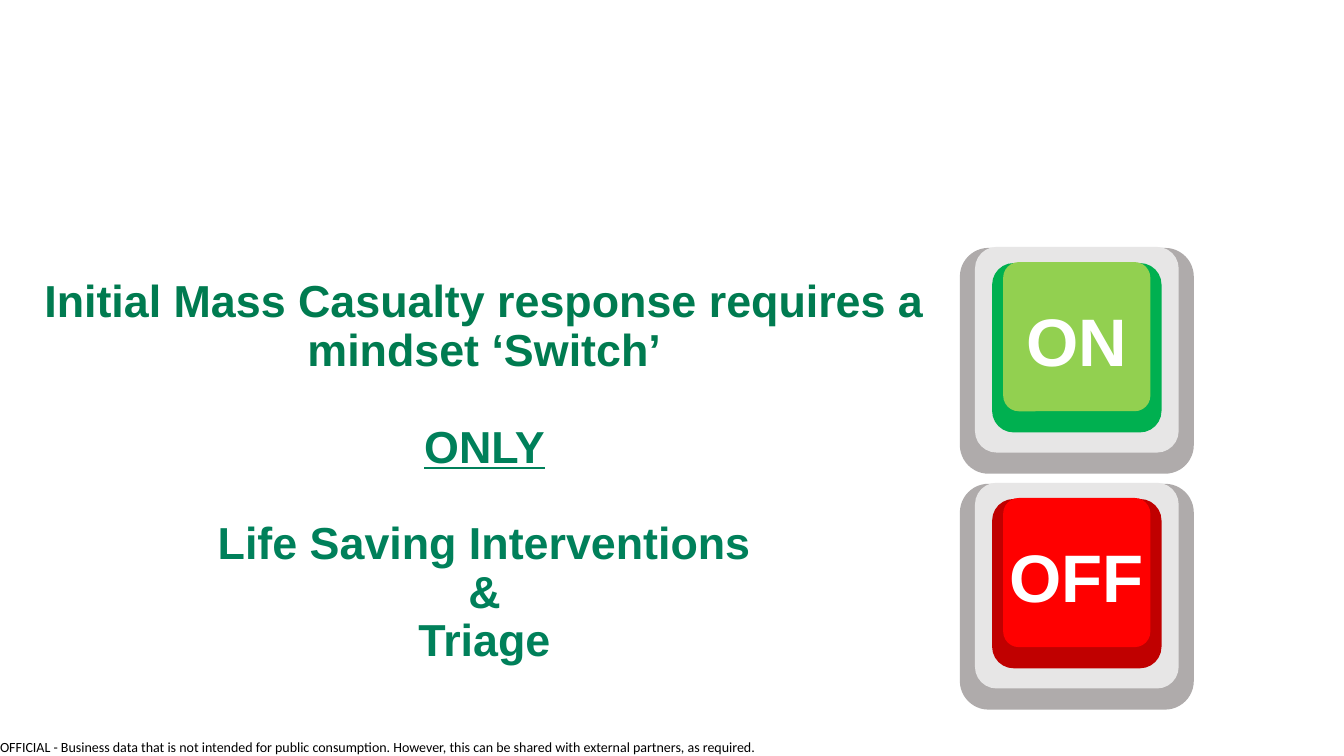
import pptx
import pptx.dml.color
import pptx.enum.shapes
import pptx.enum.text
import pptx.util

Inches = pptx.util.Inches
Pt = pptx.util.Pt
RGBColor = pptx.dml.color.RGBColor
Align = pptx.enum.text.PP_ALIGN

BLACK = RGBColor(0x00, 0x00, 0x00)
WHITE = RGBColor(0xFF, 0xFF, 0xFF)
DARK_TEAL = RGBColor(0x00, 0x7B, 0x50)
TEAL = RGBColor(0x00, 0x80, 0x5A)
KEY_SHADE = RGBColor(0xAF, 0xAB, 0xAB)
KEY_FACE = RGBColor(0xE7, 0xE6, 0xE6)
GREEN = RGBColor(0x00, 0xB0, 0x50)
LIGHT_GREEN = RGBColor(0x92, 0xD0, 0x50)
DARK_RED = RGBColor(0xC0, 0x00, 0x00)
RED = RGBColor(0xFF, 0x00, 0x00)


class SwitchSlide:
    heading_font = "Arial"
    footer_font = "Calibri"

    def __init__(self, deck):
        self.page = deck.slides.add_slide(deck.slide_layouts[5])

    def style(self, para, font, size, color, bold=False, align=Align.LEFT):
        para.alignment = align
        para.font.name = font
        para.font.size = Pt(size)
        para.font.bold = bold
        para.font.color.rgb = color

    def title(self, lines, left, top, width, height):
        """Each line is its text, colour, underline flag and space before."""
        box = self.page.shapes.title
        box.left, box.top = Inches(left), Inches(top)
        box.width, box.height = Inches(width), Inches(height)
        frame = box.text_frame
        frame.word_wrap = True
        frame.auto_size = pptx.enum.text.MSO_AUTO_SIZE.NONE
        frame.vertical_anchor = pptx.enum.text.MSO_ANCHOR.MIDDLE
        frame.text = "\n".join(line[0] for line in lines)
        for para, (_, color, underline, gap) in zip(frame.paragraphs, lines):
            self.style(para, self.heading_font, 32, color, True, Align.CENTER)
            para.font.underline = underline
            para.line_spacing = 0.9
            para.space_before = Pt(gap)

    def text(self, shapes, words, left, top, width, height):
        box = shapes.add_textbox(Inches(left), Inches(top), Inches(width), Inches(height))
        box.text_frame.word_wrap = True
        box.text_frame.text = words
        return box.text_frame

    def footer(self, words):
        frame = self.text(self.page.shapes, words, 0, 7.33, 7.58, 0.17)
        frame.margin_left = frame.margin_right = 0
        frame.margin_top = frame.margin_bottom = 0
        frame.word_wrap = False
        self.style(frame.paragraphs[0], self.footer_font, 10, BLACK)

    def key(self, label, top, rim, cap):
        """A keyboard key: four stacked rounded plates and a label."""
        shapes = self.page.shapes.add_group_shape().shapes
        plates = [
            (9.52, 0.01, 2.32, 2.24, 0.127, KEY_SHADE),
            (9.67, 0, 2.02, 2.04, 0.106, KEY_FACE),
            (9.84, 0.16, 1.68, 1.68, 0.127, rim),
            (9.95, 0.15, 1.46, 1.48, 0.106, cap),
        ]
        for left, drop, width, height, rounding, color in plates:
            plate = shapes.add_shape(
                pptx.enum.shapes.MSO_SHAPE.ROUNDED_RECTANGLE,
                Inches(left), Inches(top + drop), Inches(width), Inches(height))
            plate.adjustments[0] = rounding
            plate.shadow.inherit = False
            plate.fill.solid()
            plate.fill.fore_color.rgb = color
            plate.line.fill.background()
        frame = self.text(shapes, label, 9.76, top + 0.47, 1.84, 0.91)
        self.style(frame.paragraphs[0], self.heading_font, 48, WHITE, True, Align.CENTER)


def main():
    deck = pptx.Presentation()
    deck.slide_width, deck.slide_height = Inches(13.33), Inches(7.5)
    slide = SwitchSlide(deck)
    slide.footer("OFFICIAL - Business data that is not intended for public consumption. "
                 "However, this can be shared with external partners, as required.")
    slide.title([
        ("Initial Mass Casualty response requires a mindset ‘Switch’", DARK_TEAL, False, 0),
        ("ONLY", TEAL, True, 34.5),
        ("Life Saving Interventions", TEAL, False, 34.5),
        ("&", TEAL, False, 0),
        ("Triage", TEAL, False, 0),
    ], 0.27, 2.15, 9.07, 5.08)
    slide.key("ON", 2.45, GREEN, LIGHT_GREEN)
    slide.key("OFF", 4.79, DARK_RED, RED)
    deck.save("out.pptx")


if __name__ == "__main__":
    main()
